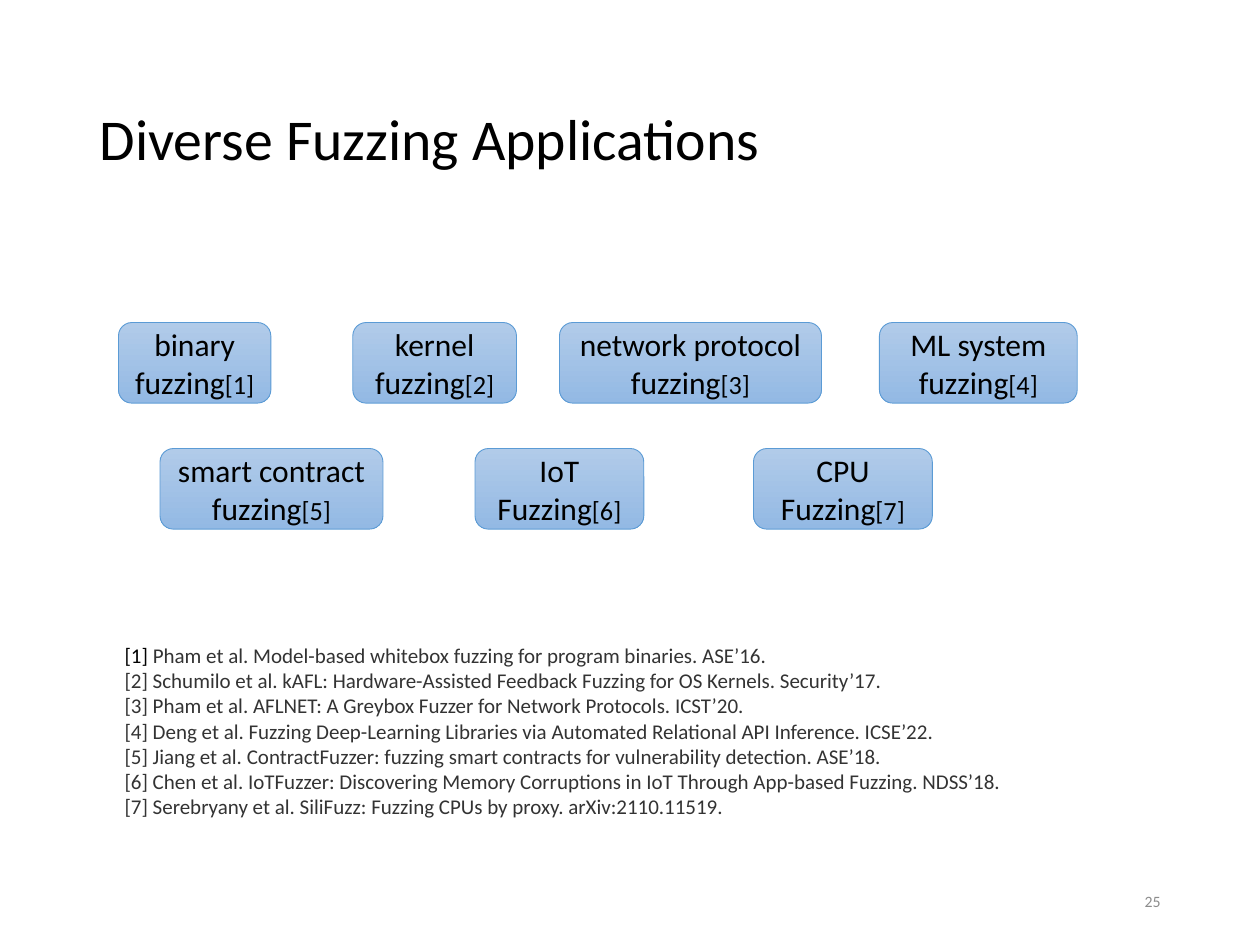
"""Build the slide on diverse fuzzing applications with its references."""
from pptx import Presentation
from pptx.dml.color import RGBColor
from pptx.enum.shapes import MSO_SHAPE as Shape
from pptx.enum.text import MSO_ANCHOR as Anchor, PP_ALIGN as Align
from pptx.util import Inches, Pt

FONT = "Calibri"
BLACK = RGBColor(0x00, 0x00, 0x00)
DARK_GREY = RGBColor(0x33, 0x33, 0x33)
GREY = RGBColor(0x8C, 0x8C, 0x8C)
BLUE = RGBColor(0x5B, 0x9B, 0xD5)
GRADIENT = RGBColor(0xB1, 0xCB, 0xE9), RGBColor(0x93, 0xB9, 0xE4)

TITLE = "Diverse Fuzzing Applications"
PAGE = "25"
BOX_HEIGHT = 0.64
ROWS = [
    (2.56, [
        ("binary fuzzing", 0.94, 1.21),
        ("kernel fuzzing", 2.8, 1.3),
        ("network protocol fuzzing", 4.44, 2.08),
        ("ML system fuzzing", 6.98, 1.57),
    ]),
    (3.56, [
        ("smart contract fuzzing", 1.27, 1.77),
        ("IoT\nFuzzing", 3.77, 1.34),
        ("CPU\nFuzzing", 5.98, 1.42),
    ]),
]
REFERENCES = [
    "Pham et al. Model-based whitebox fuzzing for program binaries. ASE’16.",
    "Schumilo et al. kAFL: Hardware-Assisted Feedback Fuzzing for OS Kernels. Security’17.",
    "Pham et al. AFLNET: A Greybox Fuzzer for Network Protocols. ICST’20.",
    "Deng et al. Fuzzing Deep-Learning Libraries via Automated Relational API Inference. ICSE’22.",
    "Jiang et al. ContractFuzzer: fuzzing smart contracts for vulnerability detection. ASE’18.",
    "Chen et al. IoTFuzzer: Discovering Memory Corruptions in IoT Through App-based Fuzzing. NDSS’18.",
    "Serebryany et al. SiliFuzz: Fuzzing CPUs by proxy. arXiv:2110.11519.",
]


def style(run, size, color=BLACK):
    run.font.name = FONT
    run.font.size = Pt(size)
    run.font.color.rgb = color


def add_run(paragraph, text, size, color=BLACK):
    run = paragraph.add_run()
    run.text = text
    style(run, size, color)


def add_text_frame(slide, left, top, width, height):
    frame = slide.shapes.add_textbox(*map(Inches, (left, top, width, height))).text_frame
    frame.word_wrap = True
    return frame


def add_title(slide):
    title = slide.shapes.title
    title.left, title.top, title.width, title.height = map(Inches, (0.69, 0.4, 8.62, 1.45))
    title.text_frame.text = TITLE
    title.text_frame.vertical_anchor = Anchor.MIDDLE
    heading = title.text_frame.paragraphs[0]
    heading.alignment = Align.LEFT
    heading.line_spacing = 0.9
    style(heading.runs[0], 33)


def add_application(slide, label, number, left, top, width):
    box = slide.shapes.add_shape(
        Shape.ROUNDED_RECTANGLE, *map(Inches, (left, top, width, BOX_HEIGHT)))
    box.shadow.inherit = False
    box.fill.gradient()
    box.fill.gradient_angle = 270
    for position, (stop, color) in enumerate(zip(box.fill.gradient_stops, GRADIENT)):
        stop.position = position
        stop.color.rgb = color
    box.line.color.rgb = BLUE
    box.line.width = Pt(0.5)
    frame = box.text_frame
    frame.word_wrap = True
    frame.vertical_anchor = Anchor.MIDDLE
    frame.margin_left = frame.margin_right = Inches(0.08)
    frame.text = label
    for paragraph in frame.paragraphs:
        paragraph.alignment = Align.CENTER
        style(paragraph.runs[0], 18)
    add_run(frame.paragraphs[-1], f"[{number}]", 15)


def add_references(slide):
    frame = add_text_frame(slide, 0.89, 5.05, 8.22, 1.51)
    for number, reference in enumerate(REFERENCES, 1):
        paragraph = frame.paragraphs[0] if number == 1 else frame.add_paragraph()
        add_run(paragraph, f"[{number}] ", 12, BLACK if number == 1 else DARK_GREY)
        add_run(paragraph, reference, 12, DARK_GREY)


def add_page_number(slide):
    frame = add_text_frame(slide, 7.06, 6.95, 2.25, 0.4)
    frame.vertical_anchor = Anchor.MIDDLE
    frame.text = PAGE
    frame.paragraphs[0].alignment = Align.RIGHT
    style(frame.paragraphs[0].runs[0], 9, GREY)


def main():
    deck = Presentation()
    deck.slide_width, deck.slide_height = Inches(10), Inches(7.5)
    slide = deck.slides.add_slide(deck.slide_layouts.get_by_name("Title Only"))
    add_title(slide)
    applications = [(label, left, top, width)
                    for top, row in ROWS for label, left, width in row]
    for number, (label, left, top, width) in enumerate(applications, 1):
        add_application(slide, label, number, left, top, width)
    add_page_number(slide)
    add_references(slide)
    deck.save("out.pptx")


if __name__ == "__main__":
    main()
